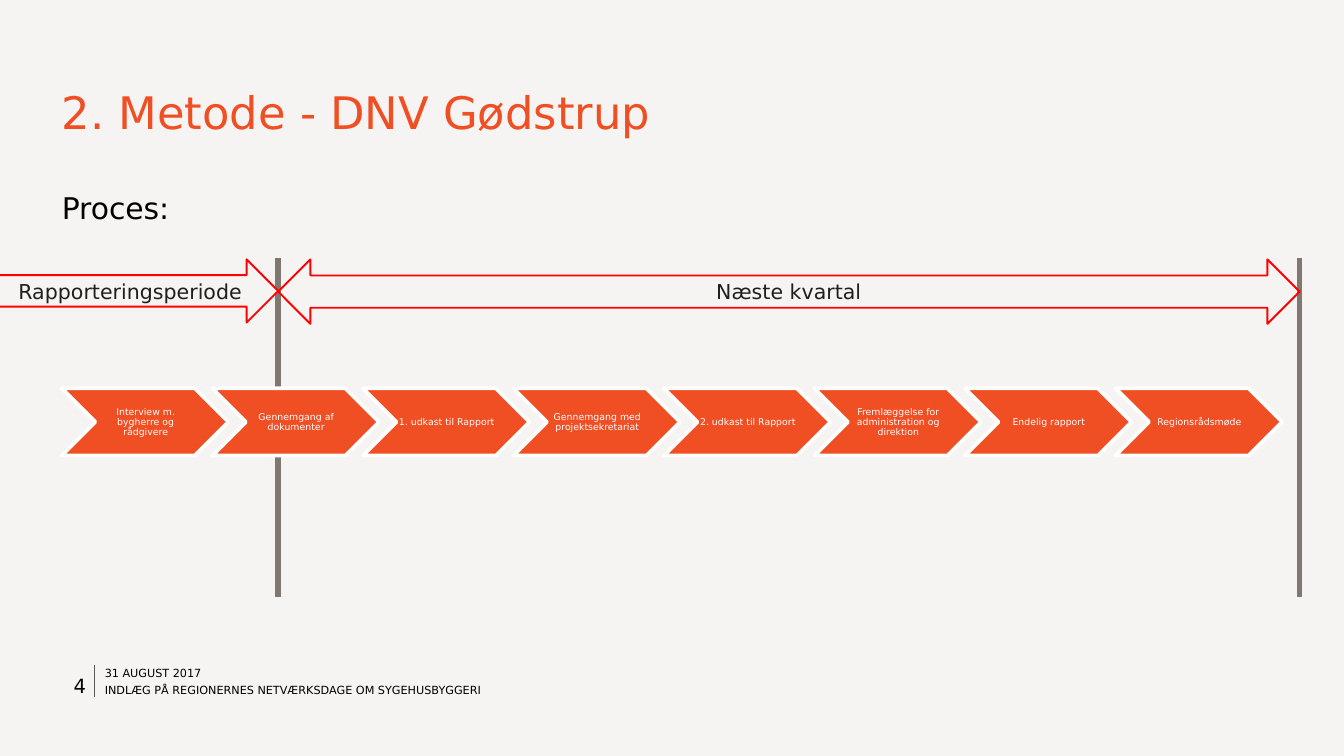
"""Build the process slide for the DNV Gødstrup method."""
from pptx import Presentation
from pptx.dml.color import RGBColor
from pptx.enum import shapes, text
from pptx.oxml import ns
from pptx.util import Inches, Pt
from lxml import etree

ORANGE = RGBColor(0xF0, 0x4E, 0x23)
RED = RGBColor(0xFF, 0x00, 0x00)
TAUPE = RGBColor(0x80, 0x77, 0x6F)
GREY = RGBColor(0x58, 0x59, 0x5B)
INK = RGBColor(0x1F, 0x1F, 0x1F)
BLACK = RGBColor(0x00, 0x00, 0x00)
WHITE = RGBColor(0xFF, 0xFF, 0xFF)
PAPER = RGBColor(0xF6, 0xF4, 0xF2)

LEFT, STEP = 0.46, 1.12
SPLIT, END = 2.07, 9.67
STEPS = [
    "Interview m. bygherre og rådgivere",
    "Gennemgang af dokumenter",
    "1. udkast til Rapport",
    "Gennemgang med projektsekretariat",
    "2. udkast til Rapport",
    "Fremlæggelse for administration og direktion",
    "Endelig rapport",
    "Regionsrådsmøde",
]

prs = Presentation()
prs.slide_width, prs.slide_height = Inches(10), Inches(10) * 9 // 16
s = prs.slides.add_slide(prs.slide_layouts[6])
s.background.fill.solid()
s.background.fill.fore_color.rgb = PAPER


def write(sp, content, size, color, align, anchor, insets):
    tf = sp.text_frame
    tf.word_wrap = True
    tf.vertical_anchor = anchor
    tf.margin_left, tf.margin_top, tf.margin_right, tf.margin_bottom = map(Inches, insets)
    p = tf.paragraphs[0]
    p.text = content
    p.alignment = align
    p.font.name, p.font.size = "DejaVu Sans", Pt(size)
    p.font.color.rgb = color
    return p


def add_line(x, top, bottom, color, width):
    line = s.shapes.add_connector(
        shapes.MSO_CONNECTOR.STRAIGHT, Inches(x), Inches(top), Inches(x), Inches(bottom))
    line.line.color.rgb = color
    line.line.width = Pt(width)
    etree.SubElement(line._element.spPr, ns.qn("a:effectLst"))


add_line(0.7, 4.95, 5.19, GREY, 0.25)
for x in (SPLIT, END):
    add_line(x, 1.92, 4.44, TAUPE, 3)

TOP, MIDDLE = text.MSO_ANCHOR.TOP, text.MSO_ANCHOR.MIDDLE
START, CENTER, RIGHT = text.PP_ALIGN.LEFT, text.PP_ALIGN.CENTER, text.PP_ALIGN.RIGHT

for box, content, size, color, align, anchor, spacing, bottom in [
    ((LEFT, 0.67, 9.08, 0.74), "2. Metode - DNV Gødstrup", 24, ORANGE, START, TOP, 26, 0.04),
    ((LEFT, 1.41, 9.08, 3.09), "Proces:", 16, BLACK, START, TOP, None, 0),
    ((0.78, 4.98, 2.14, 0.07), "31 AUGUST 2017", 6, BLACK, START, MIDDLE, 6, 0),
    ((0.78, 5.09, 3.07, 0.1), "INDLÆG PÅ REGIONERNES NETVÆRKSDAGE OM SYGEHUSBYGGERI",
     6, BLACK, START, MIDDLE, 6, 0),
    ((0.19, 4.89, 0.45, 0.42), "4", 10.5, BLACK, RIGHT, MIDDLE, None, 0),
]:
    sp = s.shapes.add_textbox(*map(Inches, box))
    p = write(sp, content, size, color, align, anchor, (0, 0, 0, bottom))
    if spacing:
        p.line_spacing = Pt(spacing)

for i, step in enumerate(STEPS):
    sp = s.shapes.add_shape(
        shapes.MSO_SHAPE.CHEVRON, Inches(LEFT + i * STEP), Inches(2.89), Inches(1.24), Inches(0.5))
    sp.shadow.inherit = False
    sp.fill.solid()
    sp.fill.fore_color.rgb = ORANGE
    sp.line.color.rgb = WHITE
    sp.line.width = Pt(2)
    p = write(sp, step, 5, WHITE, CENTER, MIDDLE, (0.01, 0.02, 0, 0.01))
    p.line_spacing = 0.9

for kind, left, right, height, fill, label in [
    (shapes.MSO_SHAPE.LEFT_RIGHT_ARROW, SPLIT, END, 0.48, None, "Næste kvartal"),
    (shapes.MSO_SHAPE.NOTCHED_RIGHT_ARROW, -0.13, SPLIT, 0.47, PAPER, "Rapporteringsperiode"),
]:
    sp = s.shapes.add_shape(kind, Inches(left), Inches(1.93), Inches(right - left), Inches(height))
    sp.shadow.inherit = False
    if fill:
        sp.fill.solid()
        sp.fill.fore_color.rgb = fill
    else:
        sp.fill.background()
    sp.line.color.rgb = RED
    sp.line.width = Pt(1)
    write(sp, label, 11, INK, CENTER, MIDDLE, (0.1, 0.05, 0.1, 0.05))

prs.save("out.pptx")
